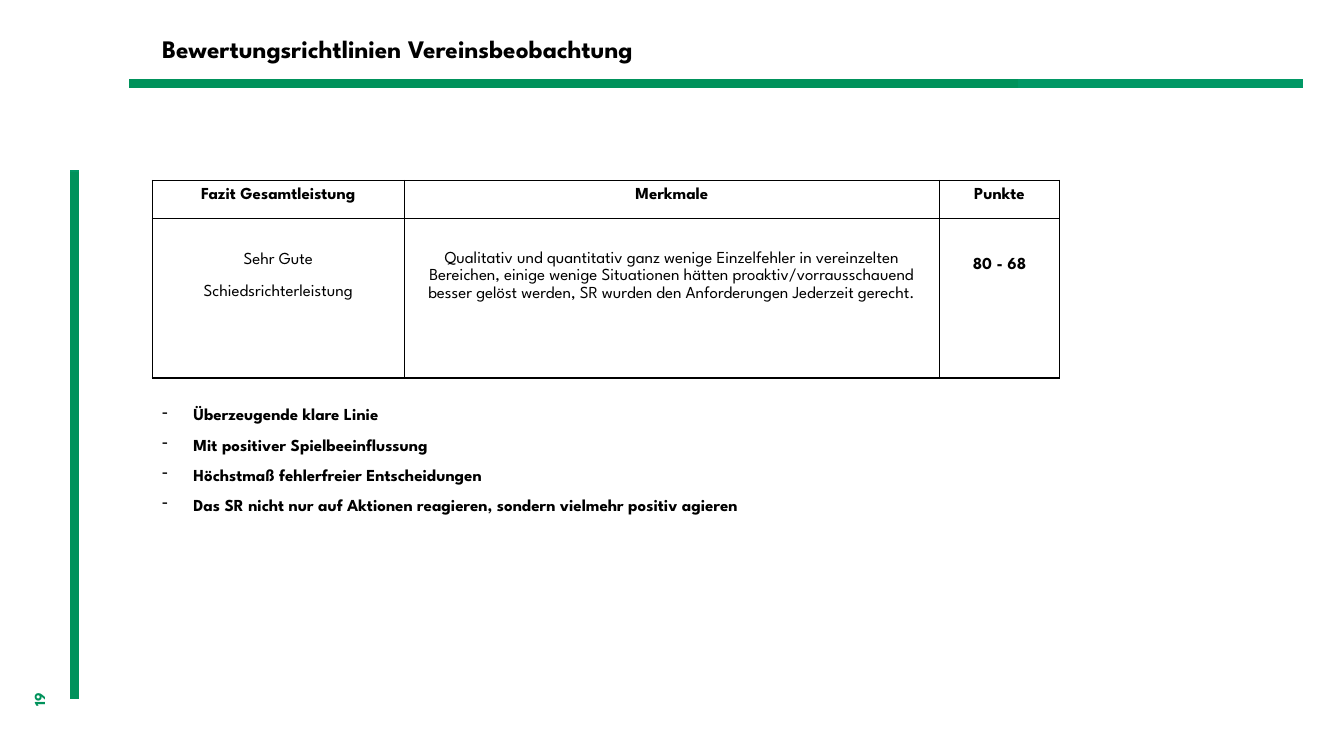
from dataclasses import dataclass
from lxml.etree import SubElement
from pptx import Presentation
from pptx.dml.color import RGBColor
from pptx.enum.shapes import MSO_CONNECTOR
from pptx.enum.text import MSO_ANCHOR, MSO_AUTO_SIZE, PP_ALIGN
from pptx.oxml.ns import qn
from pptx.slide import Slide
from pptx.table import _Cell
from pptx.text.text import TextFrame
from pptx.util import Emu, Inches, Pt

WIDTH, HEIGHT = Inches(13.33), Inches(7.5)
FONT = "League Spartan"
BLACK, GREEN, LIGHT_GREEN = "000000", "00925B", "019865"
CONTENT_LEFT = 11.33


@dataclass
class Rule:
    """A thick green line; ends in percent of the slide."""
    start: tuple[float, float]
    end: tuple[float, float]
    color: str


@dataclass
class Line:
    """One paragraph of text."""
    text: str
    size: float = 12
    bold: bool = True
    color: str = BLACK
    spacing: float = 1.0
    after: float = 0
    align: PP_ALIGN = PP_ALIGN.LEFT
    dash: bool = False


@dataclass
class Entry:
    """The content of one table cell, with its top margin in percent."""
    lines: list[Line]
    top: float = 0


def across(percent: float) -> Emu:
    """Turn a share of the slide width into a length."""
    return Emu(round(WIDTH * percent / 100))


def down(percent: float) -> Emu:
    """Turn a share of the slide height into a length."""
    return Emu(round(HEIGHT * percent / 100))


def rgb(color: str) -> RGBColor:
    """Read a hex colour."""
    return RGBColor.from_string(color)


def centred(text: str, bold: bool, spacing: float) -> Line:
    """Describe a line of a table cell."""
    return Line(text, bold=bold, spacing=spacing, after=10, align=PP_ALIGN.CENTER)


def write(frame: TextFrame, lines: list[Line]) -> None:
    """Fill a text frame with paragraphs."""
    frame.word_wrap = True
    for index, line in enumerate(lines):
        paragraph = frame.add_paragraph() if index else frame.paragraphs[0]
        paragraph.alignment = line.align
        paragraph.line_spacing = line.spacing
        paragraph.space_after = Pt(line.after)
        if line.dash:
            properties = paragraph._p.get_or_add_pPr()
            properties.set("marL", str(Inches(0.31)))
            properties.set("indent", str(-Inches(0.31)))
            SubElement(properties, qn("a:buChar")).set("char", "-")
        run = paragraph.add_run()
        run.text = line.text
        run.font.name = FONT
        run.font.size = Pt(line.size)
        run.font.bold = line.bold
        run.font.color.rgb = rgb(line.color)


def add_rule(slide: Slide, rule: Rule) -> None:
    """Draw a thick line without shadow."""
    (x1, y1), (x2, y2) = rule.start, rule.end
    connector = slide.shapes.add_connector(
        MSO_CONNECTOR.STRAIGHT, across(x1), down(y1), across(x2), down(y2))
    connector.line.color.rgb = rgb(rule.color)
    connector.line.width = Pt(6)
    SubElement(connector._element.spPr, qn("a:effectLst"))


def add_text(slide: Slide, box: tuple[float, float, float, float], lines: list[Line],
             anchor: MSO_ANCHOR = MSO_ANCHOR.TOP, rotation: float = 0,
             grow: bool = False) -> None:
    """Place a text box given in percent of the slide."""
    left, top, width, height = box
    shape = slide.shapes.add_textbox(across(left), down(top), across(width), down(height))
    shape.rotation = rotation
    shape.text_frame.vertical_anchor = anchor
    write(shape.text_frame, lines)
    shape.text_frame.auto_size = (
        MSO_AUTO_SIZE.SHAPE_TO_FIT_TEXT if grow else MSO_AUTO_SIZE.NONE)


def outline(cell: _Cell) -> None:
    """Give a cell black borders and no fill."""
    properties = cell._tc.get_or_add_tcPr()
    for side in ("lnL", "lnR", "lnT", "lnB"):
        border = SubElement(properties, qn(f"a:{side}"), w=str(Pt(1)))
        fill = SubElement(border, qn("a:solidFill"))
        SubElement(fill, qn("a:srgbClr"), val=BLACK)
    cell.fill.background()


def add_ratings(slide: Slide, columns: list[float], heights: list[float],
                entries: list[list[Entry]]) -> None:
    """Build the rating table."""
    table = slide.shapes.add_table(
        len(heights), len(columns), across(CONTENT_LEFT), down(23.87),
        across(sum(columns)), down(sum(heights))).table
    table.first_row = table.horz_banding = False
    for column, width in zip(table.columns, columns):
        column.width = across(width)
    for row, height, row_entries in zip(table.rows, heights, entries):
        row.height = down(height)
        for cell, entry in zip(row.cells, row_entries):
            cell.margin_left = cell.margin_right = Inches(0.07)
            cell.margin_top, cell.margin_bottom = down(entry.top), 0
            outline(cell)
            write(cell.text_frame, entry.lines)


RULES = [
    Rule((5.55, 22.53), (5.55, 92), LIGHT_GREEN),
    Rule((96.92, 11.07), (9.6, 11.07), LIGHT_GREEN),
    Rule((5.55, 22.8), (5.55, 92.4), GREEN),
    Rule((75.77, 11.07), (9.6, 11.07), GREEN),
]
HEADINGS = ["Fazit Gesamtleistung", "Merkmale", "Punkte"]
RATING = [
    Entry([centred("Sehr Gute", False, 1.15),
           centred("Schiedsrichterleistung", False, 1.15)], 4.2),
    Entry([centred("Qualitativ und quantitativ ganz wenige Einzelfehler in vereinzelten "
                   "Bereichen, einige wenige Situationen hätten proaktiv/vorrausschauend "
                   "besser gelöst werden, SR wurden den Anforderungen Jederzeit gerecht.",
                   False, 1.15)], 4),
    Entry([centred("80 - 68", True, 1.5)], 4.2),
]
CRITERIA = [
    "Überzeugende klare Linie",
    "Mit positiver Spielbeeinflussung",
    "Höchstmaß fehlerfreier Entscheidungen",
    "Das SR nicht nur auf Aktionen reagieren, sondern vielmehr positiv agieren",
]


def main() -> None:
    """Build and save the slide."""
    presentation = Presentation()
    presentation.slide_width, presentation.slide_height = WIDTH, HEIGHT
    slide = presentation.slides.add_slide(presentation.slide_layouts[6])
    for rule in RULES:
        add_rule(slide, rule)
    add_text(slide, (1.5, 88.8, 3.68, 5.33), [Line("19", 11, color=GREEN)], rotation=270)
    headings = [Entry([centred(heading, True, 1.5)]) for heading in HEADINGS]
    add_ratings(slide, [18.75, 39.83, 8.93], [5.07, 21.07], [headings, RATING])
    add_text(slide, (CONTENT_LEFT, 51.47, 70.89, 16.93),
             [Line(criterion, spacing=1.5, dash=True) for criterion in CRITERIA], grow=True)
    add_text(slide, (CONTENT_LEFT, 4, 64.97, 5.2),
             [Line("Bewertungsrichtlinien Vereinsbeobachtung", 18, spacing=0.9)],
             MSO_ANCHOR.MIDDLE)
    presentation.save("out.pptx")


if __name__ == "__main__":
    main()
